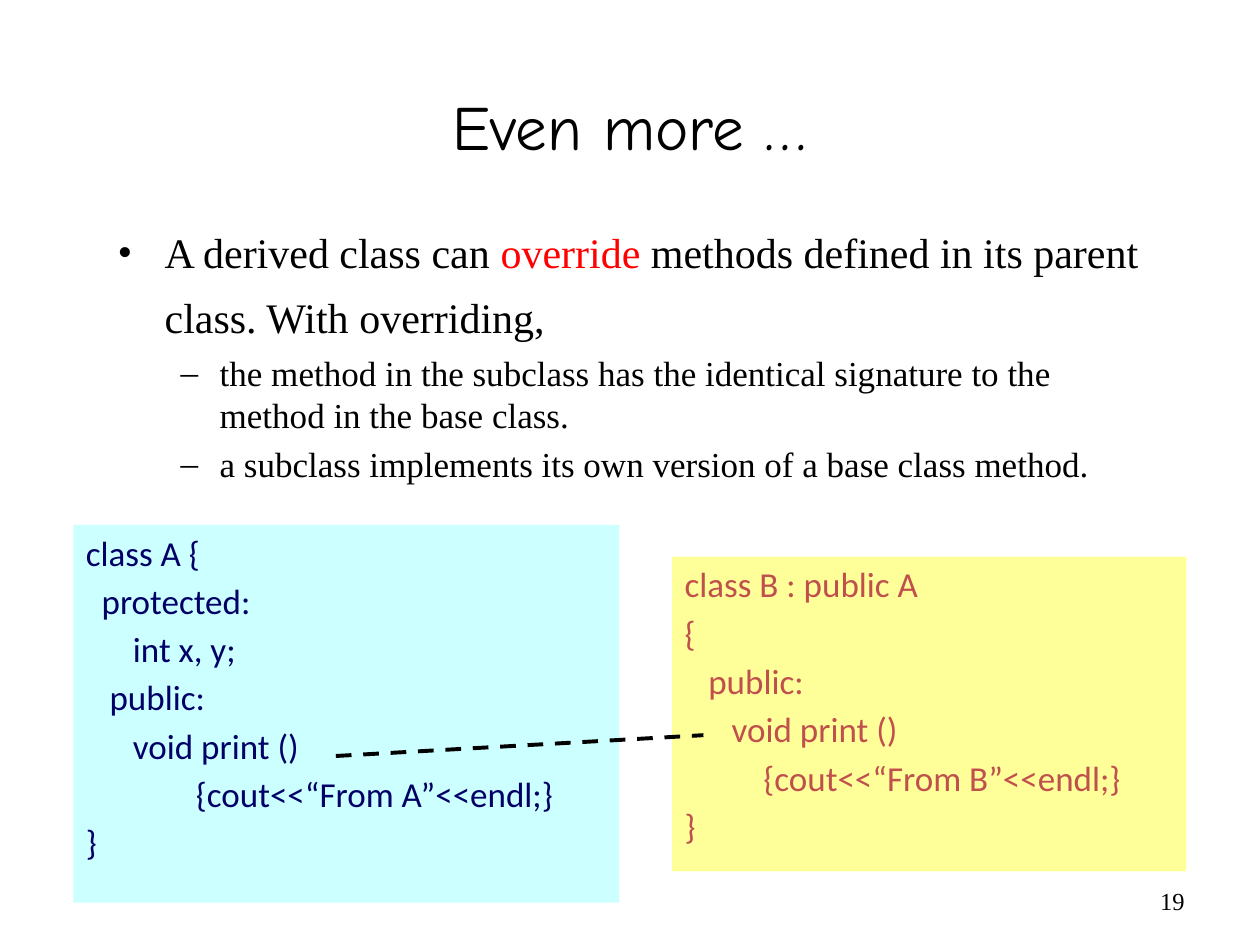
from lxml.etree import SubElement
from pptx import Presentation
from pptx.dml.color import RGBColor
from pptx.enum.dml import MSO_LINE
from pptx.enum.shapes import MSO_CONNECTOR, MSO_SHAPE
from pptx.enum.text import MSO_ANCHOR, PP_ALIGN
from pptx.oxml.ns import qn
from pptx.util import Cm, Pt

COLORS = {
    "black": "000000",
    "red": "FF0000",
    "navy": "000066",
    "brick": "C0504D",
    "cyan": "CCFFFF",
    "yellow": "FFFF99",
}
SERIF, SANS, COMIC = "Times New Roman", "Calibri", "Comic Neue"

# Each code line: left indent in cm, text
CLASS_A = [
    (0, "class A {"),
    (0.32, "protected:"),
    (0.95, "int x, y;"),
    (0.48, "public:"),
    (0.95, "void print ()"),
    (2.22, "{cout<<“From A”<<endl;}"),
    (0, "}"),
]
CLASS_B = [
    (0, "class B : public A"),
    (0, "{"),
    (0.48, "public:"),
    (0.95, "void print ()"),
    (1.59, "{cout<<“From B”<<endl;}"),
    (0, "}"),
]


def rgb(name):
    return RGBColor.from_string(COLORS[name])


def add_run(paragraph, text, size=20, font=SERIF, color="black"):
    run = paragraph.add_run()
    run.text = text
    run.font.size = Pt(size)
    run.font.name = font
    run.font.color.rgb = rgb(color)


def next_paragraph(frame):
    """Return the still empty first paragraph, or a new one."""
    first = frame.paragraphs[0]
    return frame.add_paragraph() if first.runs else first


def set_indent(paragraph, left, hanging=0, bullet=None):
    properties = paragraph._p.get_or_add_pPr()
    properties.set("marL", str(Cm(left)))
    properties.set("indent", str(-Cm(hanging)))
    if bullet:
        SubElement(properties, qn("a:buFont"), typeface=SERIF)
        SubElement(properties, qn("a:buChar"), char=bullet)


def add_text_box(slide, left, top, width, height, anchor=MSO_ANCHOR.TOP):
    shape = slide.shapes.add_textbox(Cm(left), Cm(top), Cm(width), Cm(height))
    frame = shape.text_frame
    frame.word_wrap = True
    frame.vertical_anchor = anchor
    return frame


def add_label(slide, text, left, top, width, height, align, **text_format):
    frame = add_text_box(slide, left, top, width, height, MSO_ANCHOR.MIDDLE)
    paragraph = next_paragraph(frame)
    paragraph.alignment = align
    add_run(paragraph, text, **text_format)


def add_bullets(slide):
    frame = add_text_box(slide, 2.12, 4.45, 21.5, 5.72)
    lead = next_paragraph(frame)
    lead.space_before = Pt(4.8)
    set_indent(lead, 0.95, 0.95, "•")
    add_run(lead, "A derived class can ", size=24)
    add_run(lead, "override", size=24, color="red")
    add_run(lead, " methods defined in its parent class. With overriding,", size=24)
    add_run(lead, " ", size=32)
    for text in (
        "the method in the subclass has the identical signature to the "
        "method in the base class.",
        "a subclass implements its own version of a base class method.",
    ):
        paragraph = next_paragraph(frame)
        paragraph.level = 1
        paragraph.space_before = Pt(4)
        set_indent(paragraph, 2.06, 0.79, "–")
        add_run(paragraph, text)


def add_code_box(slide, lines, left, top, width, height, fill, color):
    shape = slide.shapes.add_shape(
        MSO_SHAPE.RECTANGLE, Cm(left), Cm(top), Cm(width), Cm(height))
    shape.shadow.inherit = False
    shape.fill.solid()
    shape.fill.fore_color.rgb = rgb(fill)
    shape.line.fill.background()
    frame = shape.text_frame
    frame.word_wrap = True
    frame.vertical_anchor = MSO_ANCHOR.TOP
    for indent, text in lines:
        paragraph = next_paragraph(frame)
        paragraph.alignment = PP_ALIGN.LEFT
        paragraph.space_before = Pt(3.6)
        set_indent(paragraph, indent)
        add_run(paragraph, text, font=SANS, color=color)


def add_dashed_line(slide, start_x, start_y, end_x, end_y):
    connector = slide.shapes.add_connector(
        MSO_CONNECTOR.STRAIGHT, Cm(start_x), Cm(start_y), Cm(end_x), Cm(end_y))
    connector.line.color.rgb = rgb("black")
    connector.line.width = Pt(2.25)
    connector.line.dash_style = MSO_LINE.DASH
    SubElement(connector._element.spPr, qn("a:effectLst"))


def main():
    presentation = Presentation()
    presentation.slide_width, presentation.slide_height = Cm(25.4), Cm(19.05)
    slide = presentation.slides.add_slide(presentation.slide_layouts[6])

    add_label(slide, "19", 18.2, 17.65, 5.93, 1.02, PP_ALIGN.RIGHT, size=14)
    add_label(slide, "Even more …", 1.9, 1.69, 21.59, 1.69, PP_ALIGN.CENTER,
              size=36, font=COMIC)
    add_bullets(slide)
    add_code_box(slide, CLASS_A, 1.48, 10.58, 11.01, 7.62, "cyan", "navy")
    add_code_box(slide, CLASS_B, 13.55, 11.22, 10.37, 6.35, "yellow", "brick")
    add_dashed_line(slide, 6.77, 15.24, 14.18, 14.82)

    presentation.save("out.pptx")


if __name__ == "__main__":
    main()
